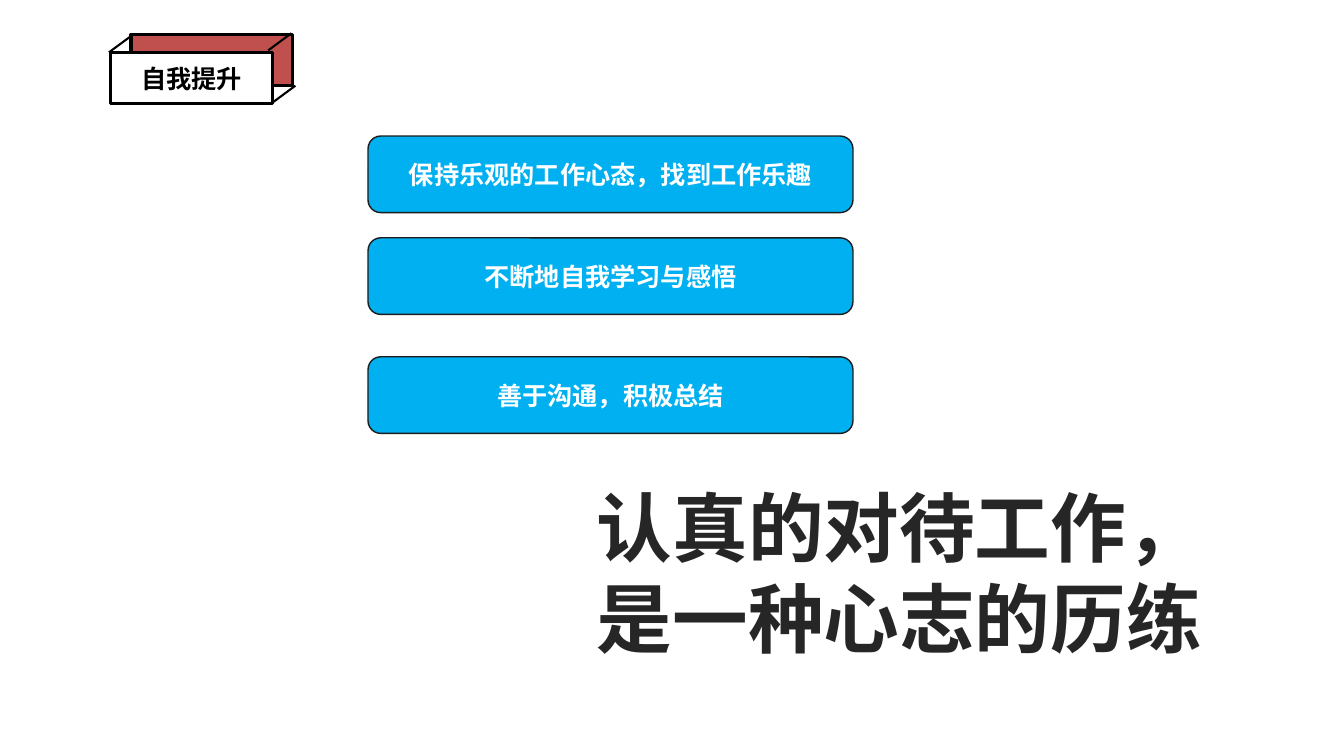
from lxml.etree import SubElement
from pptx import Presentation
from pptx.dml.color import RGBColor
from pptx.enum.lang import MSO_LANGUAGE_ID
from pptx.enum.shapes import MSO_CONNECTOR, MSO_SHAPE
from pptx.enum.text import MSO_ANCHOR, MSO_AUTO_SIZE, PP_ALIGN
from pptx.oxml import parse_xml
from pptx.oxml.ns import nsdecls, qn
from pptx.util import Inches, Pt

BLACK = RGBColor(0x00, 0x00, 0x00)
WHITE = RGBColor(0xFF, 0xFF, 0xFF)
RED = RGBColor(0xC0, 0x50, 0x4D)
BLUE = RGBColor(0x00, 0xB0, 0xF0)
INK = RGBColor(0x1C, 0x1C, 0x1C)
CHARCOAL = RGBColor(0x26, 0x26, 0x26)


class SlideBuilder:
    body_font = "Noto Sans CJK SC"
    headline_font = "Calibri"

    def __init__(self, slide):
        self.slide = slide

    def add_run(self, p, text, size, color, font):
        p.alignment = PP_ALIGN.CENTER
        r = p.add_run()
        r.text = text
        r.font.size = Pt(size)
        r.font.bold = True
        r.font.name = font
        r.font.color.rgb = color
        r.font.language_id = MSO_LANGUAGE_ID.SIMPLIFIED_CHINESE
        rPr = r._r.get_or_add_rPr()
        SubElement(rPr, qn("a:ea")).set("typeface", font)
        return rPr

    def box(self, kind, x, y, w, h, fill, line, weight, text=None, color=None):
        sp = self.slide.shapes.add_shape(
            kind, Inches(x), Inches(y), Inches(w), Inches(h))
        sp.shadow.inherit = False
        sp.fill.solid()
        sp.fill.fore_color.rgb = fill
        sp.line.color.rgb = line
        sp.line.width = Pt(weight)
        if text:
            tf = sp.text_frame
            tf.word_wrap = True
            tf.vertical_anchor = MSO_ANCHOR.MIDDLE
            self.add_run(tf.paragraphs[0], text, 18, color, self.body_font)

    def edge(self, x1, y1, x2, y2):
        cx = self.slide.shapes.add_connector(
            MSO_CONNECTOR.STRAIGHT, Inches(x1), Inches(y1), Inches(x2), Inches(y2))
        cx.line.color.rgb = BLACK
        cx.line.width = Pt(1.5)
        SubElement(cx._element.spPr, qn("a:effectLst"))

    def headline(self, x, y, w, h, lines):
        sp = self.slide.shapes.add_textbox(
            Inches(x), Inches(y), Inches(w), Inches(h))
        tf = sp.text_frame
        tf.word_wrap = False
        tf.auto_size = MSO_AUTO_SIZE.SHAPE_TO_FIT_TEXT
        for i, text in enumerate(lines):
            p = tf.add_paragraph() if i else tf.paragraphs[0]
            rPr = self.add_run(p, text, 54, CHARCOAL, self.headline_font)
            rPr.insert(0, parse_xml(
                f'<a:ln {nsdecls("a")} w="{Pt(0.75)}"><a:solidFill>'
                f'<a:srgbClr val="{WHITE}"/></a:solidFill></a:ln>'))


def main():
    prs = Presentation()
    prs.slide_width = Inches(13.33)
    prs.slide_height = Inches(7.5)
    s = SlideBuilder(prs.slides.add_slide(prs.slide_layouts[6]))

    s.box(MSO_SHAPE.RECTANGLE, 1.3, 0.34, 1.6, 0.51, RED, BLACK, 2.25)
    s.box(MSO_SHAPE.RECTANGLE, 1.1, 0.52, 1.6, 0.51, WHITE, BLACK, 2.25,
          "自我提升", BLACK)
    for x, y in ((1.31, 0.35), (2.89, 0.33), (2.93, 0.85)):
        s.edge(x, y, x - 0.23, y + 0.17)

    points = (
        (1.35, "保持乐观的工作心态，找到工作乐趣"),
        (2.36, "不断地自我学习与感悟"),
        (3.54, "善于沟通，积极总结"),
    )
    for y, text in points:
        s.box(MSO_SHAPE.ROUNDED_RECTANGLE, 3.65, y, 4.81, 0.76,
              BLUE, INK, 1, text, WHITE)

    s.headline(5.79, 4.72, 6.26, 1.92, ("认真的对待工作，", "是一种心志的历练"))
    prs.save("out.pptx")


if __name__ == "__main__":
    main()
